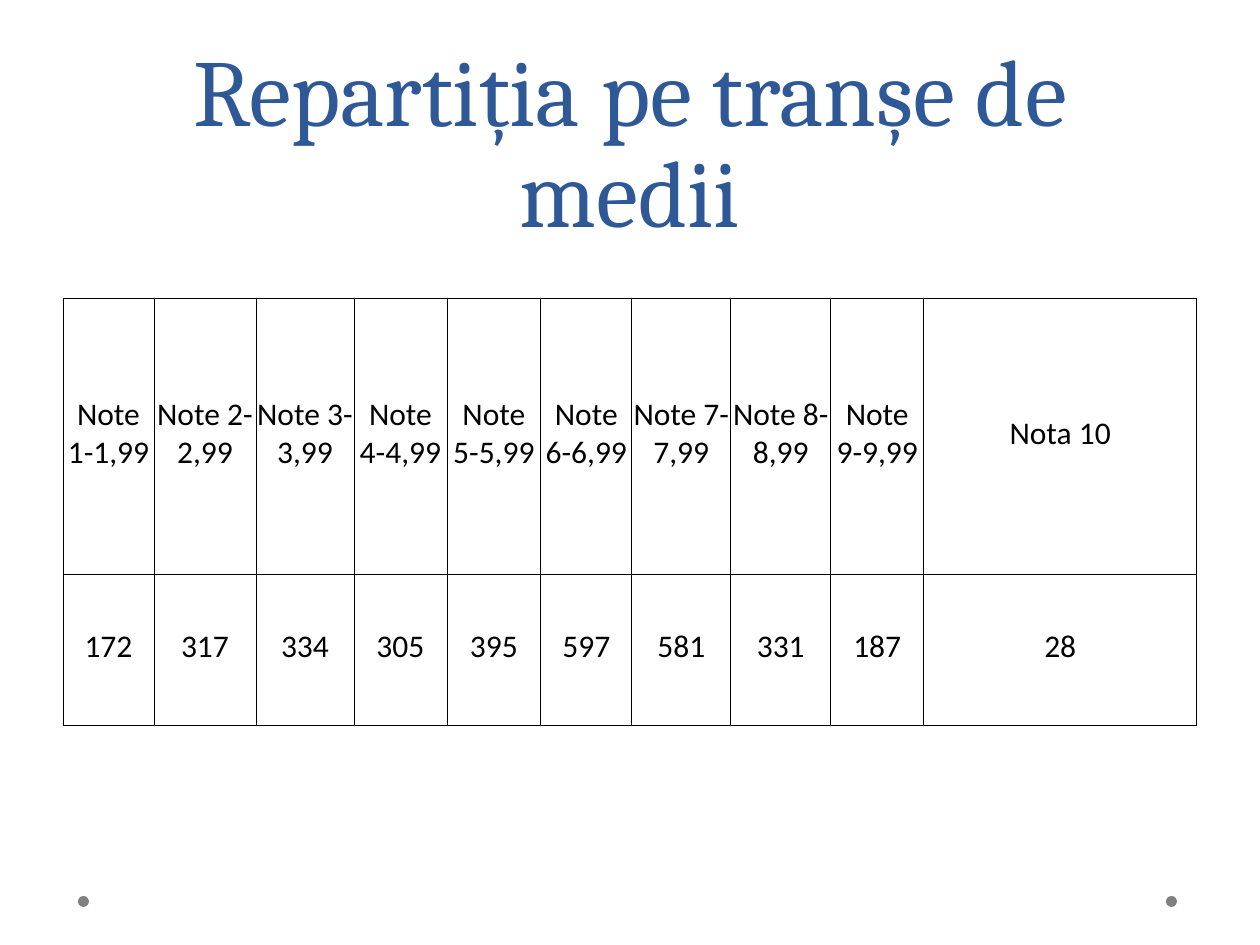
from lxml import etree
from pptx import Presentation
from pptx.dml.color import RGBColor
from pptx.enum.shapes import MSO_SHAPE as SHAPE
from pptx.enum.text import MSO_ANCHOR as ANCHOR, PP_ALIGN as ALIGN
from pptx.oxml import parse_xml
from pptx.oxml.ns import nsdecls, qn
from pptx.util import Pt

BLUE = RGBColor(0x2F, 0x58, 0x97)
BLACK = RGBColor(0, 0, 0)
GRAY = RGBColor(0x80, 0x80, 0x80)
SCALE = 914400 / 126


def px(n):
    return round(n * SCALE)


def write(tf, text, font="Calibri", size=18, color=BLACK, spacing=None):
    tf.word_wrap = True
    p = tf.paragraphs[0]
    p.alignment = ALIGN.CENTER
    if spacing:
        p.line_spacing = Pt(spacing)
    r = p.add_run()
    r.text = text
    r.font.name = font
    r.font.size = Pt(size)
    r.font.color.rgb = color


prs = Presentation()
prs.slide_width, prs.slide_height = px(1260), px(945)
s = prs.slides.add_slide(prs.slide_layouts[6])

for x in (1166, 78):
    sp = s.shapes.add_shape(SHAPE.OVAL, px(x), px(896), px(11), px(11))
    sp.shadow.inherit = False
    sp.fill.solid()
    sp.fill.fore_color.rgb = GRAY
    sp.line.fill.background()

title = s.shapes.add_textbox(px(63), px(33), px(1134), px(220))
title.text_frame.vertical_anchor = ANCHOR.BOTTOM
write(title.text_frame, "Repartiția pe tranșe de medii",
      font="Cambria", size=54, color=BLUE, spacing=58)

headers = [f"Note {n}-{n},99" for n in range(1, 10)] + ["Nota 10"]
counts = [172, 317, 334, 305, 395, 597, 581, 331, 187, 28]
widths = [91, 102, 98, 93, 94, 91, 99, 100, 93, 273]
heights = [276, 151]

table = s.shapes.add_table(2, len(headers), px(63), px(298),
                           px(sum(widths)), px(sum(heights))).table
table.first_row = table.horz_banding = False
for column, width in zip(table.columns, widths):
    column.width = px(width)
for row, height in zip(table.rows, heights):
    row.height = px(height)

for i, values in enumerate((headers, counts)):
    for j, value in enumerate(values):
        cell = table.cell(i, j)
        cell.vertical_anchor = ANCHOR.MIDDLE
        cell.margin_left = cell.margin_right = cell.margin_top = px(1)
        cell.margin_bottom = px(6)
        cell.fill.background()
        write(cell.text_frame, str(value))
        tc_pr = cell._tc.get_or_add_tcPr()
        for k, side in enumerate(("lnL", "lnR", "lnT", "lnB")):
            ln = parse_xml(f'<a:{side} {nsdecls("a")} w="{Pt(0.5)}"/>')
            fill = etree.SubElement(ln, qn("a:solidFill"))
            etree.SubElement(fill, qn("a:srgbClr"), val=str(BLACK))
            tc_pr.insert(k, ln)

prs.save("out.pptx")
